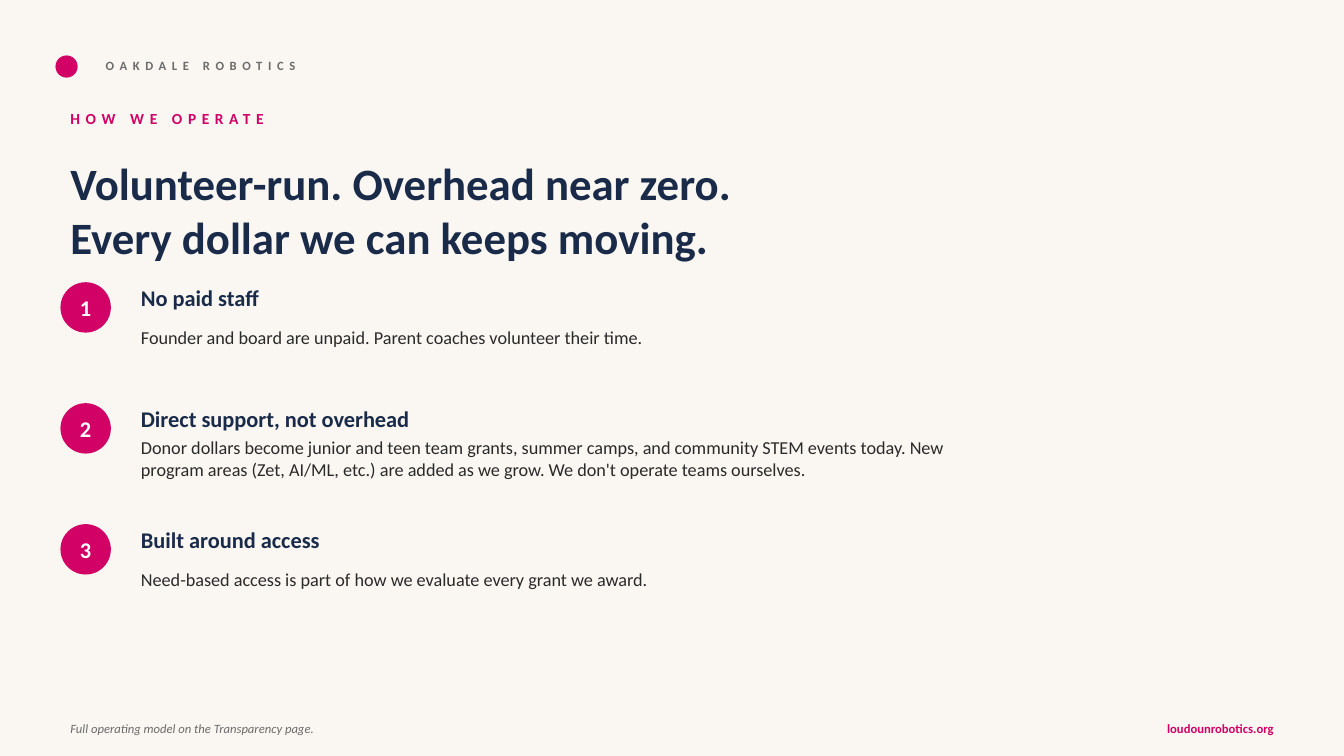
from pptx import Presentation
from pptx.dml.color import RGBColor
from pptx.enum.shapes import MSO_SHAPE as Shape
from pptx.enum.text import MSO_ANCHOR as Anchor, PP_ALIGN as Align
from pptx.util import Inches, Pt

CREAM = RGBColor(0xFA, 0xF7, 0xF2)
MAGENTA = RGBColor(0xD1, 0x01, 0x65)
NAVY = RGBColor(0x1A, 0x2B, 0x4A)
INK = RGBColor(0x2A, 0x2A, 0x2A)
GRAY = RGBColor(0x6B, 0x6B, 0x6B)
WHITE = RGBColor(0xFF, 0xFF, 0xFF)

MARGIN = 0.6
FULL_WIDTH = 12.13
FIRST_POINT_TOP = 2.8
POINT_PITCH = 1.2
POINTS = [
    ("No paid staff",
     "Founder and board are unpaid. Parent coaches volunteer their time."),
    ("Direct support, not overhead",
     "Donor dollars become junior and teen team grants, summer camps, and community "
     "STEM events today. New program areas (Zet, AI/ML, etc.) are added as we "
     "grow. We don't operate teams ourselves."),
    ("Built around access",
     "Need-based access is part of how we evaluate every grant we award."),
]


def write(frame, text, size, color, bold=False, italic=False, spacing=0,
          align=Align.LEFT, anchor=Anchor.MIDDLE, wrap=True):
    """Fill a text frame with one formatted paragraph per line of text."""
    frame.word_wrap = wrap
    frame.vertical_anchor = anchor
    frame.text = text
    for paragraph in frame.paragraphs:
        paragraph.alignment = align
        for run in paragraph.runs:
            run.font.name = "Calibri"
            run.font.size = Pt(size)
            run.font.color.rgb = color
            run.font.bold = bold
            run.font.italic = italic
            if spacing:
                run.font._element.set("spc", str(spacing * 100))


def add_text(slide, left, top, width, height, text, **style):
    """Add a text box with formatted text."""
    box = slide.shapes.add_textbox(
        Inches(left), Inches(top), Inches(width), Inches(height))
    write(box.text_frame, text, **style)


def add_dot(slide, left, top, diameter):
    """Add a plain magenta circle and return it."""
    dot = slide.shapes.add_shape(
        Shape.OVAL, Inches(left), Inches(top), Inches(diameter), Inches(diameter))
    dot.shadow.inherit = False
    dot.fill.solid()
    dot.fill.fore_color.rgb = MAGENTA
    dot.line.fill.background()
    return dot


def add_point(slide, number, top, heading, detail):
    """Add a numbered circle with its heading and detail."""
    badge = add_dot(slide, MARGIN, top, 0.5)
    write(badge.text_frame, str(number), size=16, color=WHITE, bold=True,
          align=Align.CENTER, wrap=False)
    add_text(slide, 1.3, top - 0.05, 8.5, 0.4, heading,
             size=16, color=NAVY, bold=True)
    add_text(slide, 1.3, top + 0.3, 8.5, 0.5, detail, size=13, color=INK)


def main():
    """Build the slide and save it."""
    deck = Presentation()
    deck.slide_width, deck.slide_height = Inches(13.33), Inches(7.5)
    slide = deck.slides.add_slide(deck.slide_layouts[6])
    slide.background.fill.solid()
    slide.background.fill.fore_color.rgb = CREAM

    add_dot(slide, 0.55, 0.55, 0.22)
    add_text(slide, 0.95, 0.5, 5, 0.3, "OAKDALE ROBOTICS",
             size=9, color=GRAY, bold=True, spacing=4)
    add_text(slide, MARGIN, 1, 8, 0.35, "HOW WE OPERATE",
             size=11, color=MAGENTA, bold=True, spacing=4)
    add_text(slide, MARGIN, 1.5, FULL_WIDTH, 1.15,
             "Volunteer-run. Overhead near zero.\nEvery dollar we can keeps moving.",
             size=32, color=NAVY, bold=True, anchor=Anchor.TOP)

    for index, (heading, detail) in enumerate(POINTS):
        add_point(slide, index + 1, FIRST_POINT_TOP + index * POINT_PITCH,
                  heading, detail)

    add_text(slide, MARGIN, 7.08, FULL_WIDTH, 0.3,
             "Full operating model on the Transparency page.",
             size=9, color=GRAY, italic=True)
    add_text(slide, 10.33, 7.08, 2.4, 0.3, "loudounrobotics.org",
             size=9, color=MAGENTA, bold=True, align=Align.RIGHT)
    deck.save("out.pptx")


if __name__ == "__main__":
    main()
